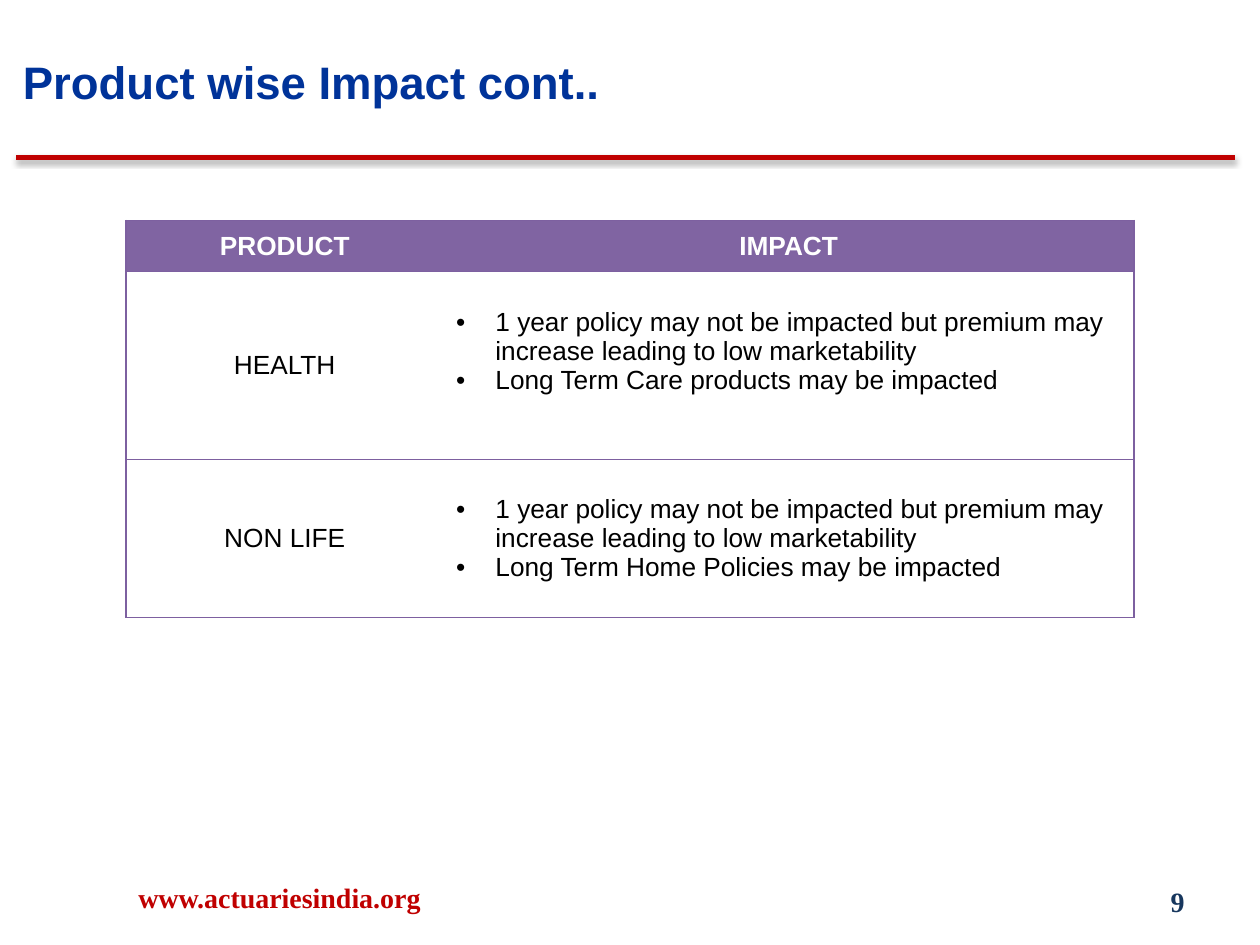
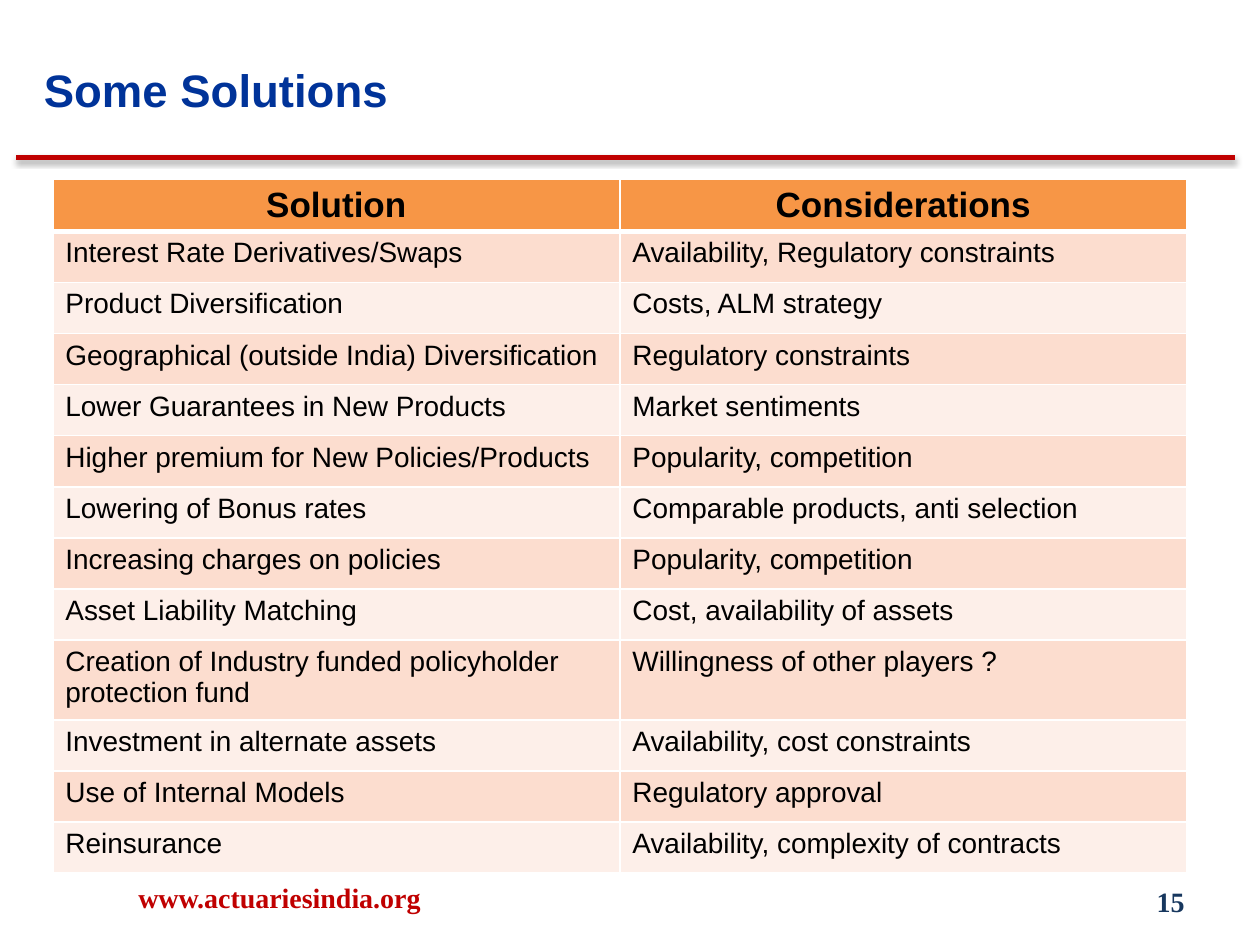
from dataclasses import dataclass

from lxml import etree
from pptx import Presentation
from pptx.dml.color import RGBColor
from pptx.enum.shapes import MSO_CONNECTOR
from pptx.enum.text import MSO_ANCHOR, PP_ALIGN
from pptx.oxml.ns import qn
from pptx.util import Pt

STRAIGHT = MSO_CONNECTOR.STRAIGHT
TOP, MIDDLE = MSO_ANCHOR.TOP, MSO_ANCHOR.MIDDLE
LEFT, CENTER, RIGHT = PP_ALIGN.LEFT, PP_ALIGN.CENTER, PP_ALIGN.RIGHT
BLANK_LAYOUT = 6


@dataclass(frozen=True)
class TextStyle:
    size: float
    color: str
    bold: bool = False
    font: str = "Arial"


@dataclass(frozen=True)
class Theme:
    red: str = "C00000"
    purple: str = "8064A2"
    purple_line: str = "7D60A0"
    orange: str = "F79646"
    bands: tuple = ("FCDDCF", "FDEFE9")
    white: str = "FFFFFF"
    title: TextStyle = TextStyle(26, "003399", True)
    website: TextStyle = TextStyle(16, "C00000", True, "Times New Roman")
    page_number: TextStyle = TextStyle(16, "17375E", True, "Times New Roman")
    impact_header: TextStyle = TextStyle(15, "FFFFFF", True)
    impact_body: TextStyle = TextStyle(15, "000000")
    solution_header: TextStyle = TextStyle(20, "000000", True)
    solution_body: TextStyle = TextStyle(16, "000000")


THEME = Theme()

SHARED_IMPACT = ("1 year policy may not be impacted but premium may "
                 "increase leading to low marketability")
# Product, impacts, row height, bottom margin
IMPACTS = [
    ("HEALTH", [SHARED_IMPACT, "Long Term Care products may be impacted"],
     107.4, 19.6),
    ("NON LIFE", [SHARED_IMPACT, "Long Term Home Policies may be impacted"],
     90.3, 3.6),
]
SOLUTIONS = [
    ("Interest Rate Derivatives/Swaps", "Availability, Regulatory constraints"),
    ("Product Diversification", "Costs, ALM strategy"),
    ("Geographical (outside India) Diversification", "Regulatory constraints"),
    ("Lower Guarantees in New Products", "Market sentiments"),
    ("Higher premium for New Policies/Products", "Popularity, competition"),
    ("Lowering of Bonus rates", "Comparable products, anti selection"),
    ("Increasing charges on policies", "Popularity, competition"),
    ("Asset Liability Matching", "Cost, availability of assets"),
    ("Creation of Industry funded policyholder protection fund",
     "Willingness of other players ?"),
    ("Investment in alternate assets", "Availability, cost constraints"),
    ("Use of Internal Models", "Regulatory approval"),
    ("Reinsurance", "Availability, complexity of contracts"),
]
ROW_HEIGHT = 29.2
TWO_LINE_ROW_HEIGHT = 42.4


# Text
def add_run(paragraph, text, style):
    run = paragraph.add_run()
    run.text = text
    run.font.name = style.font
    run.font.size = Pt(style.size)
    run.font.bold = style.bold
    run.font.color.rgb = RGBColor.from_string(style.color)


def add_text(slide, box, text, style, align=LEFT, anchor=MIDDLE):
    frame = slide.shapes.add_textbox(*map(Pt, box)).text_frame
    frame.word_wrap = True
    frame.vertical_anchor = anchor
    frame.paragraphs[0].alignment = align
    add_run(frame.paragraphs[0], text, style)
    return frame


def add_bullet(paragraph, indent):
    properties = paragraph._p.get_or_add_pPr()
    properties.set("marL", str(Pt(indent)))
    properties.set("indent", str(-Pt(indent)))
    etree.SubElement(properties, qn("a:buFont"), typeface="Arial")
    etree.SubElement(properties, qn("a:buChar"), char="•")


# Parts shared by the slides
def add_title_rule(slide):
    rule = slide.shapes.add_connector(STRAIGHT, Pt(9.4), Pt(90), Pt(705.6), Pt(90))
    rule.line.color.rgb = RGBColor.from_string(THEME.red)
    rule.line.width = Pt(3)
    effects = etree.SubElement(rule._element.spPr, qn("a:effectLst"))
    shadow = etree.SubElement(effects, qn("a:outerShdw"), blurRad=str(Pt(3.1)),
                              dist=str(Pt(1.6)), dir="5400000", rotWithShape="0")
    color = etree.SubElement(shadow, qn("a:srgbClr"), val="000000")
    etree.SubElement(color, qn("a:alpha"), val="38000")


def add_framed_slide(presentation, title, title_left, title_top, number):
    slide = presentation.slides.add_slide(presentation.slide_layouts[BLANK_LAYOUT])
    add_title_rule(slide)
    add_text(slide, (516.2, 500.4, 167.8, 28.8), str(number), THEME.page_number, RIGHT)
    frame = add_text(slide, (title_left, title_top, 606.2, 48.2), title,
                     THEME.title, anchor=TOP)
    frame.margin_top = Pt(6.6)
    add_text(slide, (72, 498.2, 228.2, 28.8), "www.actuariesindia.org", THEME.website)
    return slide


# Tables
def add_plain_table(slide, left, top, widths, heights):
    table = slide.shapes.add_table(
        len(heights), len(widths), Pt(left), Pt(top),
        Pt(sum(widths)), Pt(sum(heights))).table
    table.first_row = table.horz_banding = False
    for column, width in zip(table.columns, widths):
        column.width = Pt(width)
    for row, height in zip(table.rows, heights):
        row.height = Pt(height)
    return table


def set_borders(cell, color, widths):
    """Draw the sides named in widths (L, R, T, B) and clear the others."""
    properties = cell._tc.get_or_add_tcPr()
    for position, side in enumerate("LRTB"):
        line = etree.Element(qn("a:ln" + side), w=str(Pt(widths.get(side, 0))))
        if side in widths:
            fill = etree.SubElement(line, qn("a:solidFill"))
            etree.SubElement(fill, qn("a:srgbClr"), val=color)
        else:
            etree.SubElement(line, qn("a:noFill"))
        properties.insert(position, line)


def fill_cell(cell, lines, style, color, align=LEFT, anchor=MIDDLE, bullet_indent=0):
    cell.fill.solid()
    cell.fill.fore_color.rgb = RGBColor.from_string(color)
    cell.vertical_anchor = anchor
    frame = cell.text_frame
    for index, text in enumerate(lines):
        paragraph = frame.add_paragraph() if index else frame.paragraphs[0]
        if bullet_indent:
            add_bullet(paragraph, bullet_indent)
        paragraph.alignment = align
        add_run(paragraph, text, style)


def add_impact_table(slide):
    heights = [ROW_HEIGHT] + [height for _, _, height, _ in IMPACTS]
    table = add_plain_table(slide, 72, 126, (181.4, 394.6), heights)
    for column, heading in enumerate(("PRODUCT", "IMPACT")):
        fill_cell(table.cell(0, column), [heading], THEME.impact_header,
                  THEME.purple, CENTER)
    for row, (product, impacts, _, bottom_margin) in enumerate(IMPACTS, 1):
        fill_cell(table.cell(row, 0), [product], THEME.impact_body, THEME.white, CENTER)
        impact_cell = table.cell(row, 1)
        fill_cell(impact_cell, impacts, THEME.impact_body, THEME.white,
                  bullet_indent=22.5)
        impact_cell.margin_bottom = Pt(bottom_margin)
    for row in range(len(heights)):
        for column, outer_side in enumerate("LR"):
            set_borders(table.cell(row, column), THEME.purple_line,
                        dict.fromkeys(outer_side + "TB", 0.75))


def add_solution_table(slide):
    heights = [ROW_HEIGHT] + [
        TWO_LINE_ROW_HEIGHT if len(solution) > 50 else ROW_HEIGHT
        for solution, _ in SOLUTIONS]
    table = add_plain_table(slide, 30.2, 102.2, (324, 324), heights)
    for column, heading in enumerate(("Solution", "Considerations")):
        cell = table.cell(0, column)
        fill_cell(cell, [heading], THEME.solution_header, THEME.orange, CENTER)
        cell.margin_top = cell.margin_bottom = Pt(3)
        set_borders(cell, THEME.white, {"L": 1, "R": 1, "T": 1, "B": 3})
    for row, texts in enumerate(SOLUTIONS, 1):
        for column, text in enumerate(texts):
            cell = table.cell(row, column)
            fill_cell(cell, [text], THEME.solution_body,
                      THEME.bands[(row - 1) % 2], anchor=TOP)
            set_borders(cell, THEME.white,
                        {"L": 1, "R": 1, "T": 3 if row == 1 else 1, "B": 1})


def main():
    presentation = Presentation()
    presentation.slide_width, presentation.slide_height = Pt(720), Pt(540)
    add_impact_table(add_framed_slide(
        presentation, "Product wise Impact cont..", 6, 24, 9))
    add_solution_table(add_framed_slide(
        presentation, "Some Solutions", 18, 28.8, 15))
    presentation.save("out.pptx")


if __name__ == "__main__":
    main()
